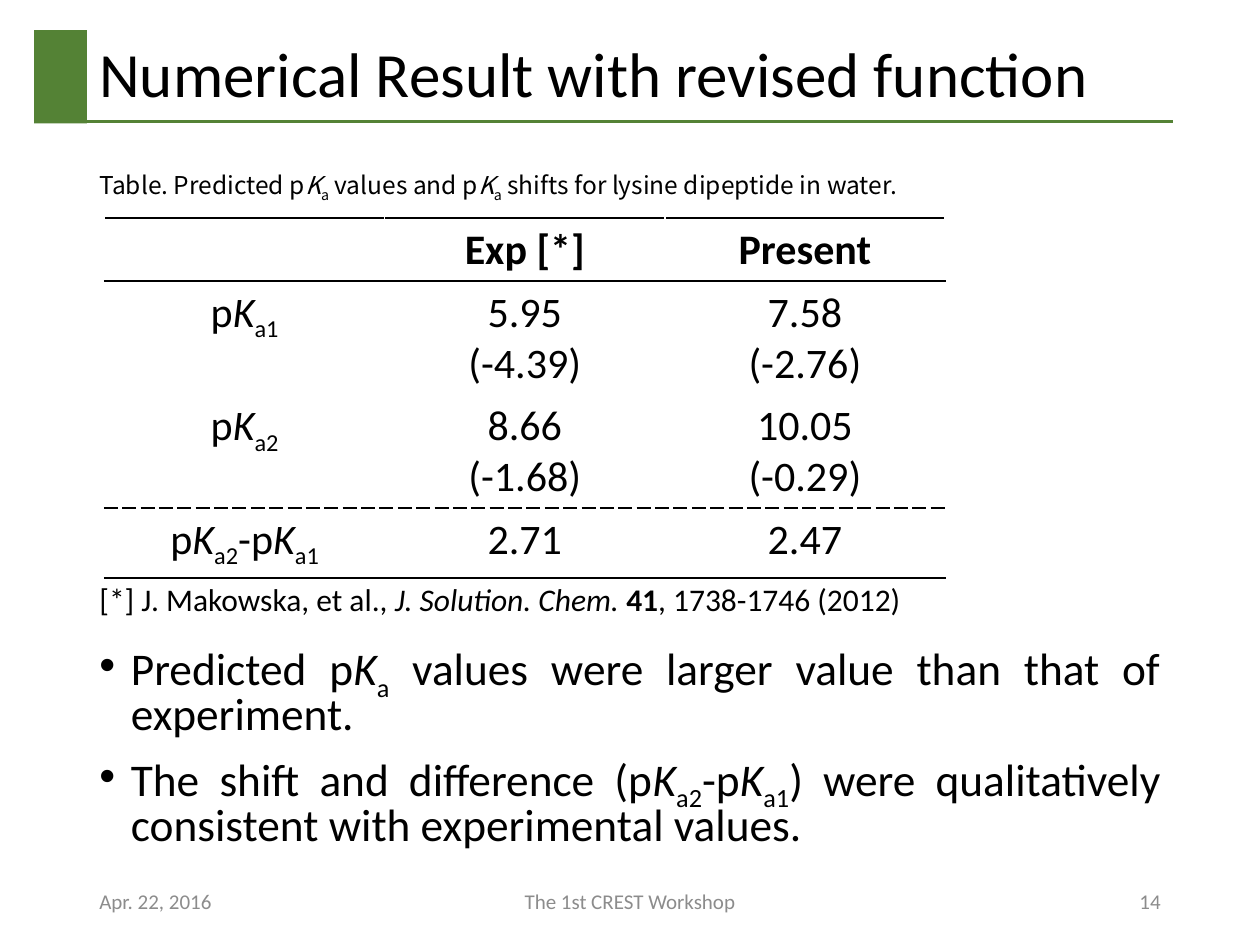
from lxml.etree import SubElement
from pptx import Presentation
from pptx.dml.color import RGBColor
from pptx.enum.shapes import MSO_CONNECTOR, MSO_SHAPE
from pptx.enum.text import MSO_ANCHOR, PP_ALIGN
from pptx.oxml.ns import qn
from pptx.util import Inches, Pt

BLACK = RGBColor(0x00, 0x00, 0x00)
WHITE = RGBColor(0xFF, 0xFF, 0xFF)
GRAY = RGBColor(0x8C, 0x8C, 0x8C)
GREEN = RGBColor(0x54, 0x82, 0x35)

prs = Presentation()
prs.slide_width, prs.slide_height = Inches(10), Inches(7.5)
s = prs.slides.add_slide(prs.slide_layouts[6])

# The grid has 100 columns and 100 rows
COL, ROW = prs.slide_width / 100, prs.slide_height / 100
LEFT, WIDTH = 6.9, 86.2
RIGHT = LEFT + WIDTH


def write(tf, text, size=24, font="Calibri", color=BLACK, bold=False,
          align=PP_ALIGN.LEFT, spacing=None, before=None, bullet=None):
    """Fill tf, one paragraph a line; ~italic~, _subscript_ and |bold| are marked."""
    tf.word_wrap = True
    for i, line in enumerate(text.split("\n")):
        p = tf.paragraphs[0] if i == 0 else tf.add_paragraph()
        p.alignment = align
        if spacing:
            p.line_spacing = spacing
        if before:
            p.space_before = Pt(before)
        if bullet:
            pPr = p._p.get_or_add_pPr()
            pPr.set("marL", str(Inches(0.25)))
            pPr.set("indent", str(-Inches(0.25)))
            SubElement(pPr, qn("a:buFont"), typeface="Arial")
            SubElement(pPr, qn("a:buChar"), char=bullet)
        for mark in "~_|":
            line = line.replace(mark, f"\n{mark}\n")
        active = set()
        for part in line.split("\n"):
            if part in ("~", "_", "|"):
                active ^= {part}
            elif part:
                r = p.add_run()
                r.text = part
                r.font.name, r.font.size = font, Pt(size)
                r.font.color.rgb = color
                r.font.bold = bold or "|" in active
                r.font.italic = "~" in active
                if "_" in active:
                    r.font._element.set("baseline", "-25000")


def add_text(x, y, w, h, text, anchor=MSO_ANCHOR.TOP, **style):
    box = s.shapes.add_textbox(*map(int, (x * COL, y * ROW, w * COL, h * ROW)))
    box.text_frame.vertical_anchor = anchor
    write(box.text_frame, text, **style)


# Title with its green block and rule
HEAD_TOP, HEAD_HEIGHT, BLOCK_LEFT = 3.2, 9.87, 2.7
add_text(LEFT, HEAD_TOP, WIDTH, HEAD_HEIGHT, "Numerical Result with revised function",
         anchor=MSO_ANCHOR.MIDDLE, size=36, spacing=0.9)

block = s.shapes.add_shape(MSO_SHAPE.RECTANGLE, int(BLOCK_LEFT * COL), int(HEAD_TOP * ROW),
                           int((LEFT - BLOCK_LEFT) * COL), int(HEAD_HEIGHT * ROW))
block.shadow.inherit = False
block.fill.solid()
block.fill.fore_color.rgb = GREEN
block.line.fill.background()

rule_y = int((HEAD_TOP + HEAD_HEIGHT) * ROW - Pt(1))
rule = s.shapes.add_connector(MSO_CONNECTOR.STRAIGHT, int(BLOCK_LEFT * COL), rule_y,
                              int(RIGHT * COL), rule_y)
rule.line.color.rgb, rule.line.width = GREEN, Pt(2)
SubElement(rule._element.spPr, qn("a:effectLst"))

# Bulleted findings
add_text(LEFT, 67.73, WIDTH, 22.27,
         "Predicted p~K~_a_ values were larger value than that of experiment.\n"
         "The shift and difference (p~K~_a2_-p~K~_a1_) were qualitatively "
         "consistent with experimental values.",
         size=25.9, align=PP_ALIGN.JUSTIFY, spacing=0.8, before=10, bullet="•")

# Footer
for x, w, text, align in [
    (LEFT, 22.5, "Apr. 22, 2016", PP_ALIGN.LEFT),
    (33.1, 33.8, "The 1st CREST Workshop", PP_ALIGN.CENTER),
    (RIGHT - 22.5, 22.5, "14", PP_ALIGN.RIGHT),
]:
    add_text(x, 92.67, w, 5.33, text, anchor=MSO_ANCHOR.MIDDLE, size=12, color=GRAY, align=align)

# Table with its caption and reference
add_text(LEFT, 17.33, 68.1, 4.53,
         "Table. Predicted p~K~_a_ values and p~K~_a_ shifts for lysine dipeptide in water.",
         size=14, font="Noto Sans CJK JP", align=PP_ALIGN.JUSTIFY)
add_text(LEFT, 60.67, 75.5, 5.33,
         "[*] J. Makowska, et al., ~J. Solution. Chem. ~|41|, 1738-1746 (2012)", size=18)

VALUES = [
    ["", "Exp [*]", "Present"],
    ["p~K~_a1_", "5.95\n(-4.39)", "7.58\n(-2.76)"],
    ["p~K~_a2_", "8.66\n(-1.68)", "10.05\n(-0.29)"],
    ["p~K~_a2_-p~K~_a1_", "2.71", "2.47"],
]
ROW_HEIGHTS = [6.67, 12, 12, 6.67]
SOLID, DASHED, HIDDEN = (BLACK, "solid"), (BLACK, "sysDash"), (WHITE, "solid")
RULES = [SOLID, SOLID, HIDDEN, DASHED, SOLID]  # from above the first row to below the last

table = s.shapes.add_table(len(VALUES), len(VALUES[0]), int(8.3 * COL), int(23.07 * ROW),
                           int(66.7 * COL), int(sum(ROW_HEIGHTS) * ROW)).table
table.first_row = table.horz_banding = False
for i, row in enumerate(VALUES):
    table.rows[i].height = int(ROW_HEIGHTS[i] * ROW)
    for j, text in enumerate(row):
        cell = table.cell(i, j)
        write(cell.text_frame, text, bold=i == 0, align=PP_ALIGN.CENTER)
        tcPr = cell._tc.get_or_add_tcPr()
        for side, (color, dash) in zip("LRTB", (HIDDEN, HIDDEN, RULES[i], RULES[i + 1])):
            ln = SubElement(tcPr, qn(f"a:ln{side}"), w=str(Pt(1)))
            SubElement(SubElement(ln, qn("a:solidFill")), qn("a:srgbClr"), val=str(color))
            SubElement(ln, qn("a:prstDash"), val=dash)
        cell.fill.background()

prs.save("out.pptx")
